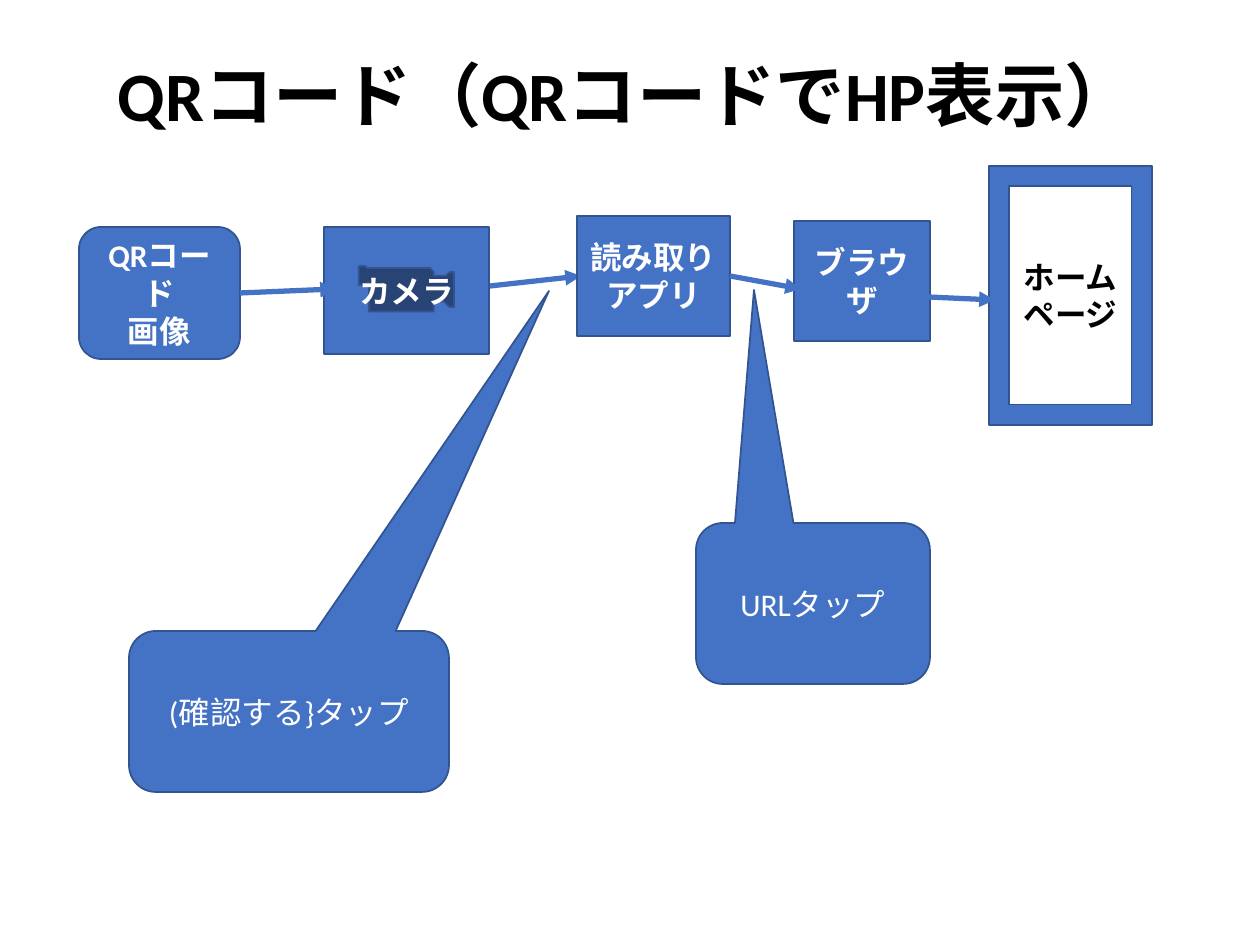
from dataclasses import dataclass

import pptx
import pptx.dml.color
import pptx.enum.shapes
import pptx.enum.text
import pptx.oxml.ns
import pptx.util
from lxml import etree

EMU_PER_PX = 914400 / 126
FONT = "Calibri"
BLUE, EDGE, WHITE, BLACK = "4472C4", "325491", "FFFFFF", "000000"
Kind = pptx.enum.shapes.MSO_SHAPE
Align = pptx.enum.text.PP_ALIGN


@dataclass
class Box:
    name: str
    kind: Kind
    at: tuple[int, int, int, int]
    text: str
    color: str = WHITE
    bold: bool = True
    tip: tuple[int, int] | None = None  # point of a callout


@dataclass
class Arrow:
    start: tuple[int, int]
    end: tuple[int, int]
    source: str = ""  # box whose right side it leaves from


# Back to front
PARTS = (
    Box("image", Kind.ROUNDED_RECTANGLE, (79, 227, 161, 132), "QRコード\n画像"),
    Box("camera", Kind.ACTION_BUTTON_MOVIE, (324, 227, 165, 127), "カメラ"),
    Box("browser", Kind.RECTANGLE, (794, 221, 136, 120), "ブラウザ"),
    Box("page", Kind.FRAME, (989, 166, 163, 259), "ホームページ", color=BLACK),
    Arrow((240, 293), (336, 289), source="image"),
    Arrow((490, 286), (581, 276)),
    Arrow((906, 296), (995, 300)),
    Box("reader", Kind.RECTANGLE, (577, 216, 153, 120), "読み取りアプリ"),
    Arrow((730, 276), (801, 289), source="reader"),
    Box("confirm", Kind.ROUNDED_RECTANGULAR_CALLOUT, (129, 631, 320, 161),
        "(確認する}タップ", bold=False, tip=(549, 291)),
    Box("open", Kind.ROUNDED_RECTANGULAR_CALLOUT, (696, 523, 234, 161),
        "URLタップ", bold=False, tip=(754, 290)),
)


def px(*values: int) -> list[pptx.util.Emu]:
    return [pptx.util.Emu(round(v * EMU_PER_PX)) for v in values]


def rgb(value: str) -> pptx.dml.color.RGBColor:
    return pptx.dml.color.RGBColor.from_string(value)


def write(sp, text: str, *, size: float = 18, color: str = WHITE,
          bold: bool = True, align: Align = Align.CENTER,
          spacing: float | None = None) -> None:
    tf = sp.text_frame
    tf.word_wrap = True
    tf.auto_size = pptx.enum.text.MSO_AUTO_SIZE.NONE
    tf.vertical_anchor = pptx.enum.text.MSO_ANCHOR.MIDDLE
    tf.text = text
    for p in tf.paragraphs:
        p.alignment = align
        p.line_spacing = spacing
        for r in p.runs:
            r.font.name, r.font.size = FONT, pptx.util.Pt(size)
            r.font.bold = bold
            r.font.color.rgb = rgb(color)


def draw_box(shapes, box: Box):
    sp = shapes.add_shape(box.kind, *px(*box.at))
    sp.shadow.inherit = False
    sp.fill.solid()
    sp.fill.fore_color.rgb = rgb(BLUE)
    sp.line.color.rgb = rgb(EDGE)
    sp.line.width = pptx.util.Pt(1)
    if box.tip:
        # The tip is measured from the centre, in widths and heights
        x, y, w, h = box.at
        sp.adjustments[0] = (box.tip[0] - x) / w - 0.5
        sp.adjustments[1] = (box.tip[1] - y) / h - 0.5
    write(sp, box.text, color=box.color, bold=box.bold)
    return sp


def draw_arrow(shapes, arrow: Arrow, boxes: dict) -> None:
    cx = shapes.add_connector(pptx.enum.shapes.MSO_CONNECTOR.STRAIGHT,
                              *px(*arrow.start, *arrow.end))
    if arrow.source:
        cx.begin_connect(boxes[arrow.source], 3)
    cx.line.color.rgb = rgb(BLUE)
    cx.line.width = pptx.util.Pt(3)
    qn = pptx.oxml.ns.qn
    etree.SubElement(cx.line._get_or_add_ln(), qn("a:tailEnd"), type="triangle")
    etree.SubElement(cx._element.spPr, qn("a:effectLst"))


def main() -> None:
    prs = pptx.Presentation()
    prs.slide_width, prs.slide_height = px(1260, 945)
    s = prs.slides.add_slide(prs.slide_layouts[5])

    # Title
    title = s.shapes.title
    title.left, title.top, title.width, title.height = px(105, 33, 1086, 132)
    write(title, "QRコード（QRコードでHP表示）", size=39.6, color=BLACK,
          align=Align.LEFT, spacing=0.9)

    # Flow and callouts
    boxes = {}
    for part in PARTS:
        if isinstance(part, Box):
            boxes[part.name] = draw_box(s.shapes, part)
        else:
            draw_arrow(s.shapes, part, boxes)

    prs.save("out.pptx")


if __name__ == "__main__":
    main()
